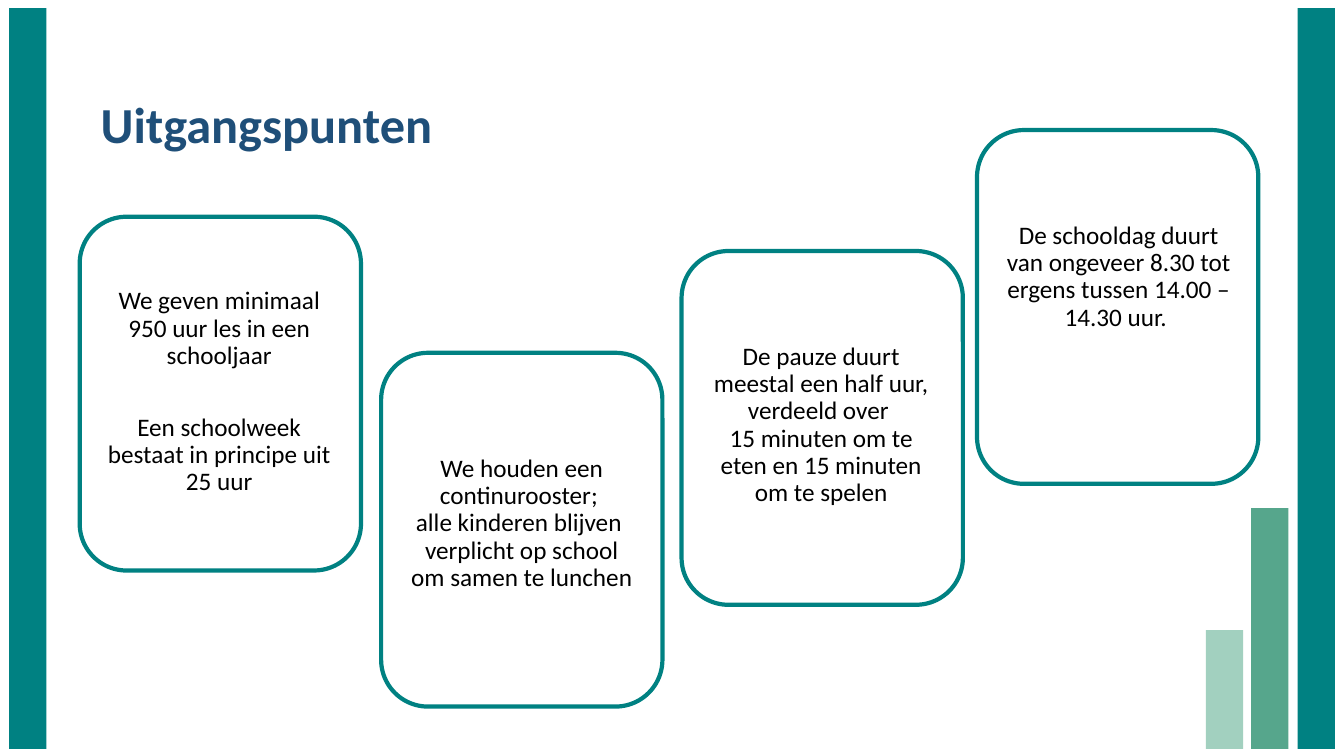
from pptx import Presentation
from pptx import util as u
from pptx.dml.color import RGBColor
from pptx.enum import shapes, text

TITLE = "Uitgangspunten"
CARDS = [
    ((0.79, 2.15), (0.96, 2.81), 2.87,
     ["We geven minimaal 950 uur les in een schooljaar",
      "Een schoolweek bestaat in principe uit 25 uur"]),
    ((3.78, 3.5), (3.96, 4.47), 1.78,
     ["We houden een continurooster; \nalle kinderen blijven \n"
      "verplicht op school om samen te lunchen"]),
    ((6.76, 2.49), (6.93, 3.36), 1.78,
     ["De pauze duurt meestal een half uur, verdeeld over \n"
      "15 minuten om te eten en 15 minuten om te spelen"]),
    ((9.69, 1.29), (9.88, 2.16), 1.78,
     ["De schooldag duurt van ongeveer 8.30 tot ergens tussen "
      "14.00 – 14.30 uur. "]),
]
BARS = [(0.09, 7.35, "teal"), (12.41, 2.39, "green"),
        (12.87, 7.35, "teal"), (11.96, 1.18, "mint")]
BASE, BAR_W = 7.43, 0.37
CARD_W, CARD_H, TEXT_W = 2.79, 3.51, 2.43
THEME = {
    "font": "Calibri", "head": 36, "body": 18, "line": 3,
    "after": 6, "gap": 26, "lead": 0.9,
    "teal": "008182", "green": "56A68C", "mint": "A2D0BF",
    "navy": "1F4F79", "black": "000000",
}


def color(name):
    return RGBColor.from_string(THEME[name])


def add_box(slide, kind, *area):
    box = slide.shapes.add_shape(kind, *map(u.Inches, area))
    box.shadow.inherit = False
    return box


def add_bar(slide, left, height, tone):
    bar = add_box(slide, shapes.MSO_SHAPE.RECTANGLE,
                  left, BASE - height, BAR_W, height)
    bar.fill.solid()
    bar.fill.fore_color.rgb = color(tone)
    bar.line.fill.background()


def add_card(slide, left, top):
    card = add_box(slide, shapes.MSO_SHAPE.ROUNDED_RECTANGLE,
                   left, top, CARD_W, CARD_H)
    card.fill.background()
    card.line.color.rgb = color("teal")
    card.line.width = u.Pt(THEME["line"])


def add_text(slide, area, lines, size, tone, align, bold=False):
    frame = slide.shapes.add_textbox(*map(u.Inches, area)).text_frame
    frame.word_wrap = True
    for i, line in enumerate(lines):
        para = frame.add_paragraph() if i else frame.paragraphs[0]
        para.text = line.replace("\n", "\v")
        para.alignment = align
        para.line_spacing = THEME["lead"]
        para.space_after = u.Pt(THEME["after"])
        if i:
            para.space_before = u.Pt(THEME["gap"])
        font = para.font
        font.name, font.size, font.bold = THEME["font"], u.Pt(THEME[size]), bold
        font.color.rgb = color(tone)


def main():
    deck = Presentation()
    deck.slide_width, deck.slide_height = u.Inches(13.33), u.Inches(7.5)
    slide = deck.slides.add_slide(deck.slide_layouts[6])
    for bar in BARS:
        add_bar(slide, *bar)
    add_text(slide, (0.9, 0.94, 8.05, 0.9), [TITLE], "head", "navy",
             text.PP_ALIGN.LEFT, True)
    for spot, start, height, lines in CARDS:
        add_card(slide, *spot)
        add_text(slide, (*start, TEXT_W, height), lines, "body", "black",
                 text.PP_ALIGN.CENTER)
    deck.save("out.pptx")


if __name__ == "__main__":
    main()
